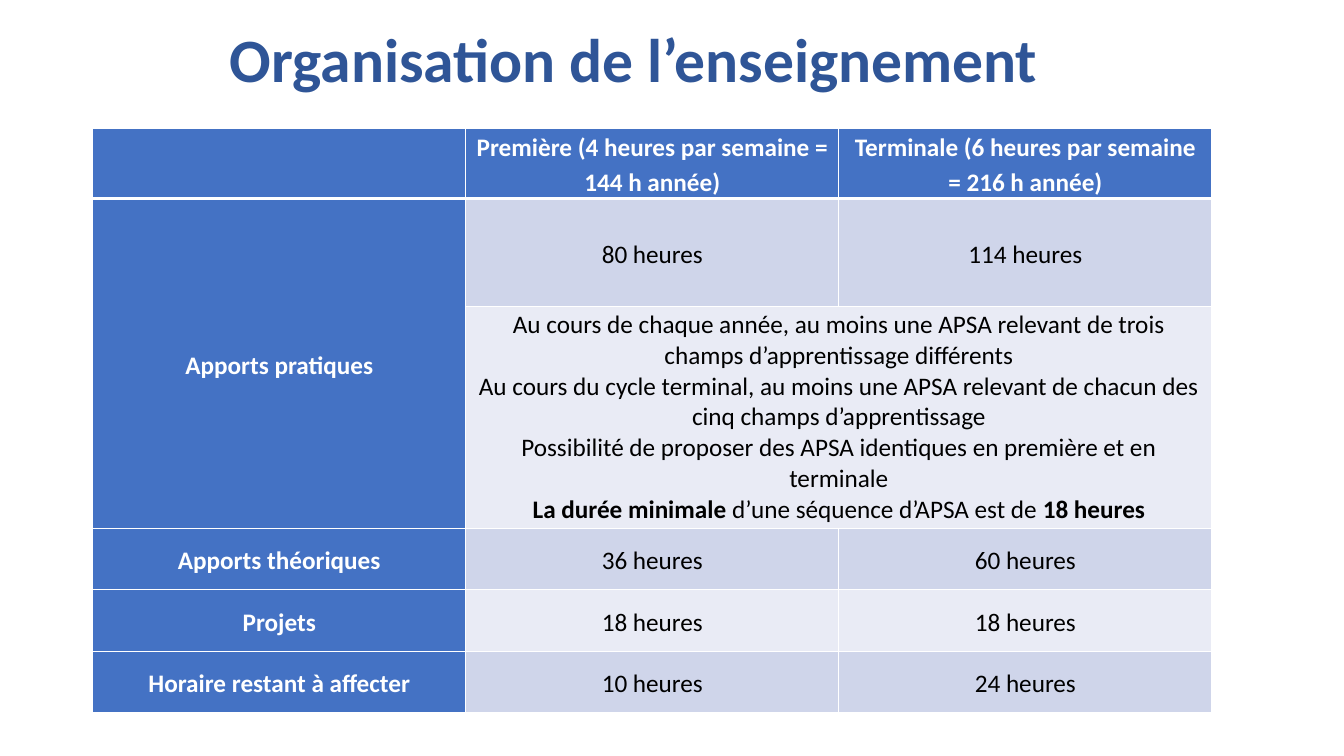
from lxml import etree
from pptx import Presentation
from pptx import util as u
from pptx.dml.color import RGBColor
from pptx.enum import text
from pptx.oxml.ns import qn

COLORS = {
    "title": "2F5597",
    "header": "4472C4",
    "dark_band": "CFD5EA",
    "light_band": "E9EBF5",
    "white": "FFFFFF",
    "black": "000000",
}


def write(paragraph, content, *, size=18, color="black", bold=False,
          font="Calibri", line=None, gap=0):
    """Add a centred run, with the paragraph's spacing."""
    paragraph.alignment = text.PP_ALIGN.CENTER
    paragraph.space_before = paragraph.space_after = u.Pt(gap)
    if line:
        paragraph.line_spacing = line
    run = paragraph.add_run()
    run.text = content
    run.font.name = font
    run.font.size = u.Pt(size)
    run.font.bold = bold
    run.font.color.rgb = RGBColor.from_string(COLORS[color])


class SlideBuilder:
    def __init__(self, slide, border="white"):
        self.slide = slide
        self.border = border

    def title(self, content, left, top, width, height):
        box = self.slide.shapes.add_textbox(
            *(u.Inches(n) for n in (left, top, width, height)))
        frame = box.text_frame
        frame.word_wrap = True
        frame.vertical_anchor = text.MSO_ANCHOR.MIDDLE
        write(frame.paragraphs[0], content, size=44, color="title",
              bold=True, line=0.9)

    def table(self, left, top, widths, heights):
        grid = self.slide.shapes.add_table(
            len(heights), len(widths), u.Inches(left), u.Inches(top),
            u.Inches(sum(widths)), u.Inches(sum(heights))).table
        for column, width in zip(grid.columns, widths):
            column.width = u.Inches(width)
        for row, height in zip(grid.rows, heights):
            row.height = u.Inches(height)
        return grid

    def cell(self, cell, fill, top=1, bottom=1):
        cell.margin_left = cell.margin_right = u.Inches(0.07)
        cell.margin_top = cell.margin_bottom = 0
        cell.vertical_anchor = text.MSO_ANCHOR.MIDDLE
        props = cell._tc.get_or_add_tcPr()
        for side, points in (("L", 1), ("R", 1), ("T", top), ("B", bottom)):
            edge = etree.SubElement(props, qn(f"a:ln{side}"), w=str(u.Pt(points)))
            solid = etree.SubElement(edge, qn("a:solidFill"))
            etree.SubElement(solid, qn("a:srgbClr"), val=COLORS[self.border])
        cell.fill.solid()
        cell.fill.fore_color.rgb = RGBColor.from_string(COLORS[fill])


HOURS = [
    ["", "Première (4 heures par semaine = 144 h année)",
     "Terminale (6 heures par semaine = 216 h année)"],
    ["Apports pratiques", "80 heures", "114 heures"],
    ["", "", ""],
    ["Apports théoriques", "36 heures", "60 heures"],
    ["Projets", "18 heures", "18 heures"],
    ["Horaire restant à affecter", "10 heures", "24 heures"],
]

# Each paragraph is a list of (text, bold) pieces
APSA_RULES = [
    [("Au cours de chaque année, au moins une APSA relevant de trois "
      "champs d’apprentissage différents", False)],
    [("Au cours du cycle terminal, au moins une APSA relevant de chacun des "
      "cinq champs d’apprentissage", False)],
    [("Possibilité de proposer des APSA identiques en première et en "
      "terminale", False)],
    [("La durée minimale ", True), ("d’une séquence d’APSA est de ", False),
     ("18 heures", True)],
]


def main():
    prs = Presentation()
    prs.slide_width, prs.slide_height = u.Inches(13.33), u.Inches(7.5)
    builder = SlideBuilder(prs.slides.add_slide(prs.slide_layouts[6]))

    # Title
    builder.title("Organisation de l’enseignement", 0.4, 0.12, 11.78, 1.01)

    # Hours table: header row and column, then alternating bands
    hours = builder.table(0.92, 1.27, [3.7] * 3,
                          [0.7, 1.07, 2.2, 0.61, 0.61, 0.61])
    for r, row in enumerate(HOURS):
        band = "dark_band" if r % 2 else "light_band"
        for c, content in enumerate(row):
            heading = r == 0 or c == 0
            cell = hours.cell(r, c)
            builder.cell(cell, "header" if heading else band,
                         top=3 if r == 1 else 1, bottom=3 if r == 0 else 1)
            if content:
                write(cell.text_frame.paragraphs[0], content, bold=heading,
                      color="white" if heading else "black", line=1.15, gap=6)

    # Merged cells
    hours.cell(1, 0).merge(hours.cell(2, 0))
    hours.cell(2, 1).merge(hours.cell(2, 2))

    # Rules on APSA
    rules = hours.cell(2, 1).text_frame
    for i, pieces in enumerate(APSA_RULES):
        paragraph = rules.add_paragraph() if i else rules.paragraphs[0]
        for content, bold in pieces:
            write(paragraph, content, bold=bold)

    prs.save("out.pptx")


if __name__ == "__main__":
    main()
